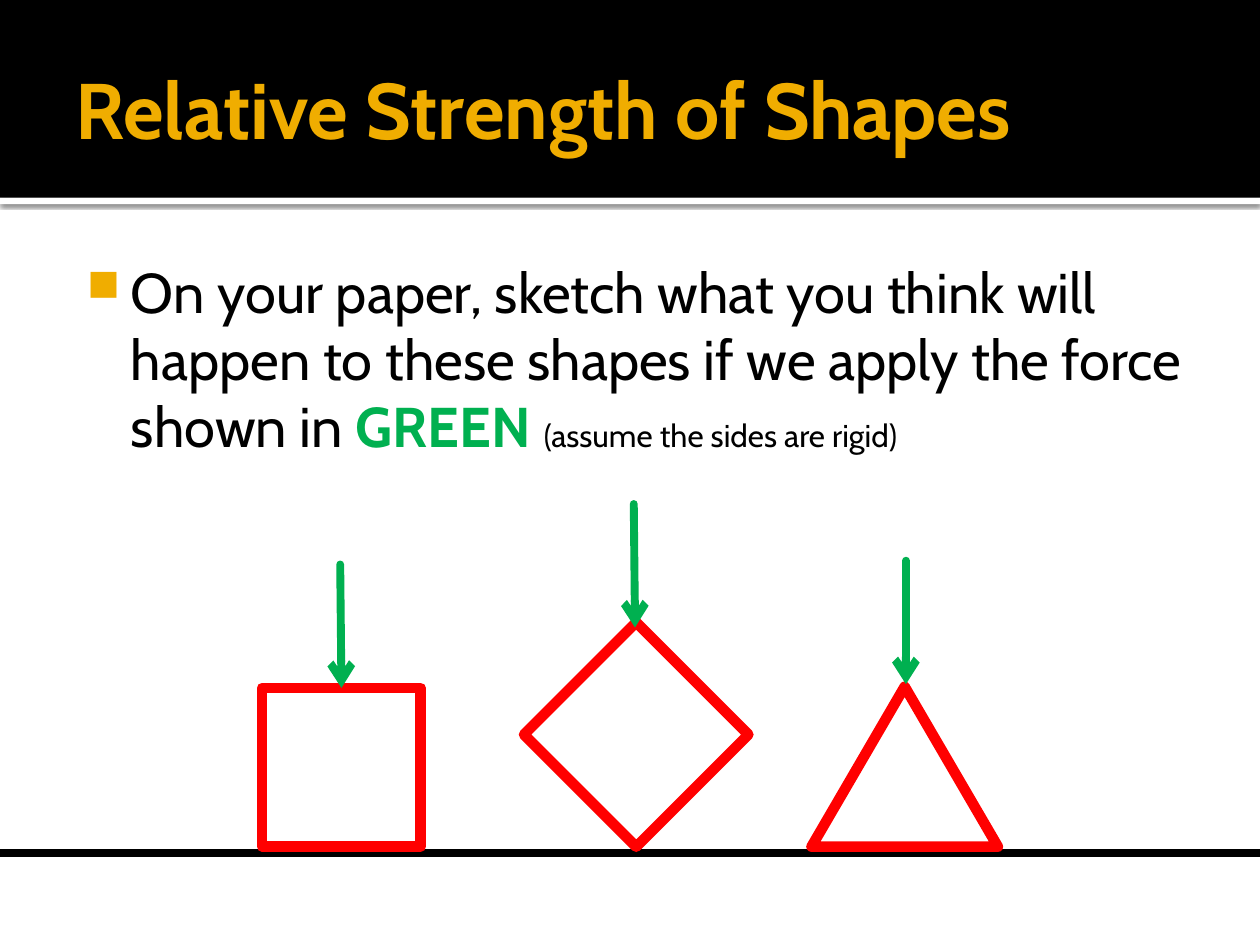
from dataclasses import dataclass
from typing import Optional

from lxml import etree
from pptx import Presentation, util as u
from pptx.dml.color import RGBColor
from pptx.enum import shapes, text
from pptx.oxml import ns

BLACK = RGBColor(0x00, 0x00, 0x00)
WHITE = RGBColor(0xFF, 0xFF, 0xFF)
GOLD = RGBColor(0xF0, 0xAD, 0x00)
GREEN = RGBColor(0x00, 0xB0, 0x50)
RED = RGBColor(0xFF, 0x00, 0x00)
FONT = "Cabin"


@dataclass
class Frame:
    left: float
    top: float
    width: float
    height: float

    def lengths(self) -> tuple:
        return tuple(map(u.Inches, (self.left, self.top, self.width, self.height)))


@dataclass
class Loaded:
    kind: shapes.MSO_SHAPE
    frame: Frame
    rotation: float
    tip: tuple
    tail: tuple
    joined: bool = False


@dataclass
class Span:
    words: str
    size: float
    color: RGBColor
    bold: bool = False


LOADED_SHAPES = [
    Loaded(shapes.MSO_SHAPE.ISOSCELES_TRIANGLE, Frame(6.44, 5.45, 1.48, 1.27), 0,
           (7.19, 5.43), (7.19, 4.45)),
    Loaded(shapes.MSO_SHAPE.RECTANGLE, Frame(2.08, 5.46, 1.26, 1.26), 0,
           (2.71, 5.46), (2.7, 4.48), True),
    Loaded(shapes.MSO_SHAPE.RECTANGLE, Frame(4.42, 5.2, 1.26, 1.26), 315,
           (5.04, 4.98), (5.03, 4)),
]
TITLE = [Span("Relative Strength of Shapes", 45, GOLD, True)]
TASK = [
    Span("On your paper, sketch what you think will happen to these shapes "
         "if we apply the force shown in ", 32, BLACK),
    Span("GREEN ", 32, GREEN, True),
    Span("(assume the sides are rigid)", 18, BLACK),
]


def apply(target, values: dict) -> None:
    for name, value in values.items():
        setattr(target, name, value)


def add_xml(parent, tag: str, **attributes: str):
    return etree.SubElement(parent, ns.qn(tag), attributes)


def add_band(page, frame: Frame, color: RGBColor):
    band = page.shapes.add_shape(shapes.MSO_SHAPE.RECTANGLE, *frame.lengths())
    band.shadow.inherit = False
    band.fill.solid()
    band.fill.fore_color.rgb = color
    band.line.fill.background()
    return band


def add_drop_shadow(band) -> None:
    effects = band._element.spPr.find(ns.qn("a:effectLst"))
    shadow = add_xml(effects, "a:outerShdw", blurRad=str(u.Pt(2.5)), dist=str(u.Pt(0.8)),
                     dir="5400000", algn="tl", rotWithShape="0")
    color = add_xml(shadow, "a:srgbClr", val=str(BLACK))
    add_xml(color, "a:alpha", val="60000")


def fill_text(box, spans: list, anchor, insets: tuple):
    frame = box.text_frame
    left, top, right, bottom = map(u.Inches, insets)
    apply(frame, {"word_wrap": True, "auto_size": text.MSO_AUTO_SIZE.NONE,
                  "vertical_anchor": anchor, "margin_left": left, "margin_top": top,
                  "margin_right": right, "margin_bottom": bottom})
    para = frame.paragraphs[0]
    para.alignment = text.PP_ALIGN.LEFT
    for span in spans:
        run = para.add_run()
        run.text = span.words
        apply(run.font, {"name": FONT, "size": u.Pt(span.size), "bold": span.bold})
        run.font.color.rgb = span.color
    return para


def add_bullet(para) -> None:
    props = para._p.get_or_add_pPr()
    props.set("marL", str(u.Inches(0.48)))
    props.set("indent", str(u.Inches(-0.35)))
    add_xml(add_xml(props, "a:buClr"), "a:srgbClr", val=str(GOLD))
    add_xml(props, "a:buSzPct", val="80000")
    add_xml(props, "a:buChar", char="■")


def add_line(page, start: tuple, end: tuple, color: RGBColor):
    line = page.shapes.add_connector(shapes.MSO_CONNECTOR.STRAIGHT,
                                     *map(u.Inches, start + end))
    line.line.color.rgb = color
    line.line.width = u.Pt(4.5)
    add_xml(line._element.spPr, "a:effectLst")
    return line


def add_outline(page, item: Loaded):
    outline = page.shapes.add_shape(item.kind, *item.frame.lengths())
    outline.shadow.inherit = False
    outline.rotation = item.rotation
    outline.fill.background()
    outline.line.color.rgb = RED
    outline.line.width = u.Pt(6)
    add_xml(outline.line._get_or_add_ln(), "a:round")
    return outline


def add_force(page, item: Loaded, outline) -> None:
    arrow = add_line(page, item.tip, item.tail, GREEN)
    stroke = arrow.line._get_or_add_ln()
    stroke.set("cap", "rnd")
    add_xml(stroke, "a:round")
    add_xml(stroke, "a:headEnd", type="arrow")
    if item.joined:
        arrow.begin_connect(outline, 0)


def main() -> None:
    deck = Presentation()
    apply(deck, {"slide_width": u.Inches(10), "slide_height": u.Inches(7.5)})
    page = deck.slides.add_slide(deck.slide_layouts[5])

    add_drop_shadow(add_band(page, Frame(0, 1.57, 10, 0.05), WHITE))
    add_band(page, Frame(0, 0, 10, 1.57), BLACK)

    title = page.shapes.title
    page.shapes._spTree.append(title._element)
    left, top, width, height = Frame(0.5, 0.17, 9, 1.37).lengths()
    apply(title, {"left": left, "top": top, "width": width, "height": height})
    fill_text(title, TITLE, text.MSO_ANCHOR.MIDDLE, (0.1, 0.05, 0.05, 0.05))

    task = page.shapes.add_textbox(*Frame(0.5, 1.94, 9, 2.36).lengths())
    add_bullet(fill_text(task, TASK, text.MSO_ANCHOR.TOP, (0.06, 0.1, 0.1, 0.05)))

    add_line(page, (0, 6.77), (10, 6.77), BLACK)
    outlines = [add_outline(page, item) for item in LOADED_SHAPES]
    for item, outline in zip(LOADED_SHAPES, outlines):
        add_force(page, item, outline)

    deck.save("out.pptx")


if __name__ == "__main__":
    main()
